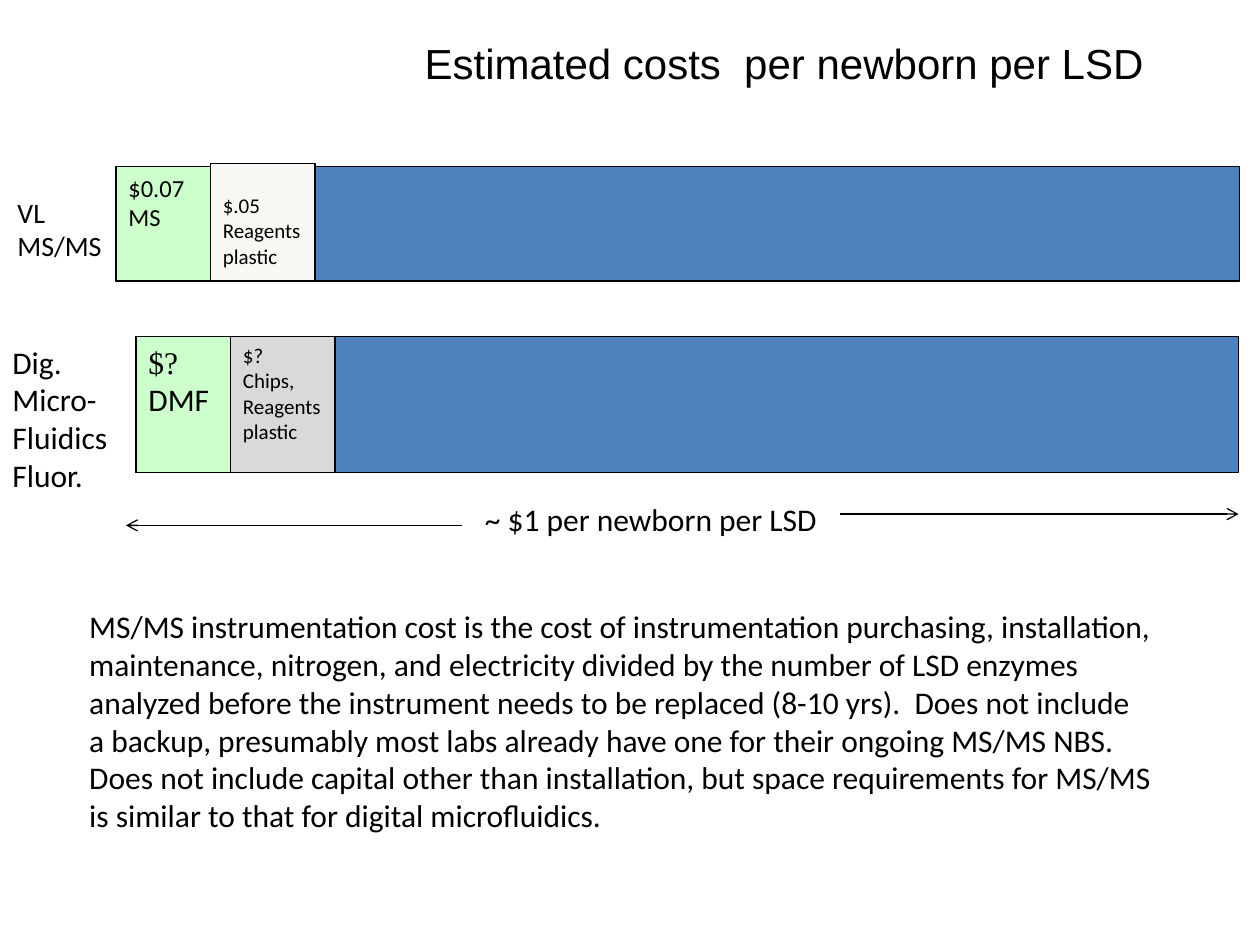
"""Build a slide comparing estimated newborn screening costs per LSD."""
from dataclasses import dataclass

from lxml.etree import SubElement
from pptx import Presentation
from pptx.dml.color import RGBColor
from pptx.enum.shapes import MSO_CONNECTOR, MSO_SHAPE
from pptx.enum.text import MSO_ANCHOR, PP_ALIGN
from pptx.oxml.ns import qn
from pptx.slide import Slide
from pptx.text.text import TextFrame
from pptx.util import Inches, Pt

BLACK = "000000"
BLUE = "4F81BD"
GREEN = "CCFFCC"


@dataclass(frozen=True)
class Box:
    left: float
    top: float
    width: float
    height: float


@dataclass(frozen=True)
class Line:
    text: str
    font: str = "Calibri"


@dataclass(frozen=True)
class Segment:
    box: Box
    fill: str
    lines: tuple[Line, ...] = ()
    size: int = 12
    top_inset: float = 0.05


@dataclass(frozen=True)
class Label:
    box: Box
    size: int
    lines: tuple[Line, ...]


@dataclass(frozen=True)
class Arrow:
    start: float
    end: float
    y: float


def lines(*texts: str) -> tuple[Line, ...]:
    """Return one Calibri line for each text."""
    return tuple(Line(text) for text in texts)


SEGMENTS = (
    Segment(Box(0.92, 1.32, 8.92, 0.91), BLUE),
    Segment(Box(0.92, 1.32, 0.75, 0.91), GREEN, lines("$0.07", "MS"), 14),
    Segment(Box(1.67, 1.3, 0.83, 0.93), "F8F7F3",
            lines("$.05", "Reagents", "plastic"), top_inset=0.23),
    Segment(Box(1.08, 2.67, 8.75, 1.08), BLUE),
    Segment(Box(1.08, 2.67, 0.75, 1.08), GREEN,
            (Line("$?", "Times New Roman"), Line("DMF")), 18),
    Segment(Box(1.83, 2.67, 0.83, 1.08), "D9D9D9",
            lines("$?", "Chips,", "Reagents", "plastic")),
)

LABELS = (
    Label(Box(0.04, 1.5, 0.91, 0.64), 16, lines("VL", "MS/MS")),
    Label(Box(0, 2.67, 1.02, 1.31), 18,
          lines("Dig.", "Micro-", "Fluidics", "Fluor.")),
    Label(Box(3.75, 3.92, 2.91, 0.4), 18, lines("~ $1 per newborn per LSD")),
    Label(Box(0.61, 4.77, 8.75, 1.92), 18, lines(
        "MS/MS instrumentation cost is the cost of instrumentation purchasing, installation,",
        "maintenance, nitrogen, and electricity divided by the number of LSD enzymes",
        "analyzed before the instrument needs to be replaced (8-10 yrs).  Does not include",
        "a backup, presumably most labs already have one for their ongoing MS/MS NBS.",
        "Does not include capital other than installation, but space requirements for MS/MS",
        "is similar to that for digital microfluidics.")),
)

ARROWS = (Arrow(6.67, 9.83, 4.08), Arrow(3.67, 1, 4.17))


def color(value: str) -> RGBColor:
    """Turn a hex string into a colour."""
    return RGBColor.from_string(value)


def place(box: Box) -> tuple[int, ...]:
    """Return left, top, width and height as lengths."""
    return tuple(Inches(n) for n in (box.left, box.top, box.width, box.height))


def write(frame: TextFrame, content: tuple[Line, ...], size: int) -> None:
    """Write each line as a left-aligned paragraph from the top."""
    frame.word_wrap = False
    frame.vertical_anchor = MSO_ANCHOR.TOP
    for index, line in enumerate(content):
        paragraph = frame.add_paragraph() if index else frame.paragraphs[0]
        paragraph.alignment = PP_ALIGN.LEFT
        run = paragraph.add_run()
        run.text = line.text
        run.font.name = line.font
        run.font.size = Pt(size)
        run.font.color.rgb = color(BLACK)


def add_title(slide: Slide) -> None:
    """Place and fill the title placeholder."""
    title = slide.shapes.title
    title.left, title.top, title.width, title.height = place(
        Box(3.27, 0.25, 6, 0.6))
    write(title.text_frame,
          (Line("Estimated costs  per newborn per LSD", "Arial"),), 24)


def add_segment(slide: Slide, segment: Segment) -> None:
    """Draw one outlined part of a cost bar."""
    bar = slide.shapes.add_shape(MSO_SHAPE.RECTANGLE, *place(segment.box))
    bar.shadow.inherit = False
    bar.fill.solid()
    bar.fill.fore_color.rgb = color(segment.fill)
    bar.line.color.rgb = color(BLACK)
    bar.line.width = Pt(0.75)
    bar.text_frame.margin_top = Inches(segment.top_inset)
    write(bar.text_frame, segment.lines, segment.size)


def add_label(slide: Slide, label: Label) -> None:
    """Add free-standing text."""
    caption = slide.shapes.add_textbox(*place(label.box))
    write(caption.text_frame, label.lines, label.size)


def add_arrow(slide: Slide, arrow: Arrow) -> None:
    """Draw a horizontal line with an open arrowhead at its end."""
    span = slide.shapes.add_connector(
        MSO_CONNECTOR.STRAIGHT, Inches(arrow.start), Inches(arrow.y),
        Inches(arrow.end), Inches(arrow.y))
    span.line.color.rgb = color(BLACK)
    span.line.width = Pt(0.75)
    SubElement(span.get_or_add_ln(), qn("a:tailEnd"), type="arrow")
    SubElement(span._element.spPr, qn("a:effectLst"))


def main() -> None:
    """Build and save the slide."""
    presentation = Presentation()
    presentation.slide_width = Inches(10)
    presentation.slide_height = Inches(7.5)
    slide = presentation.slides.add_slide(presentation.slide_layouts[5])
    add_title(slide)
    for segment in SEGMENTS:
        add_segment(slide, segment)
    for label in LABELS:
        add_label(slide, label)
    for arrow in ARROWS:
        add_arrow(slide, arrow)
    presentation.save("out.pptx")


if __name__ == "__main__":
    main()
